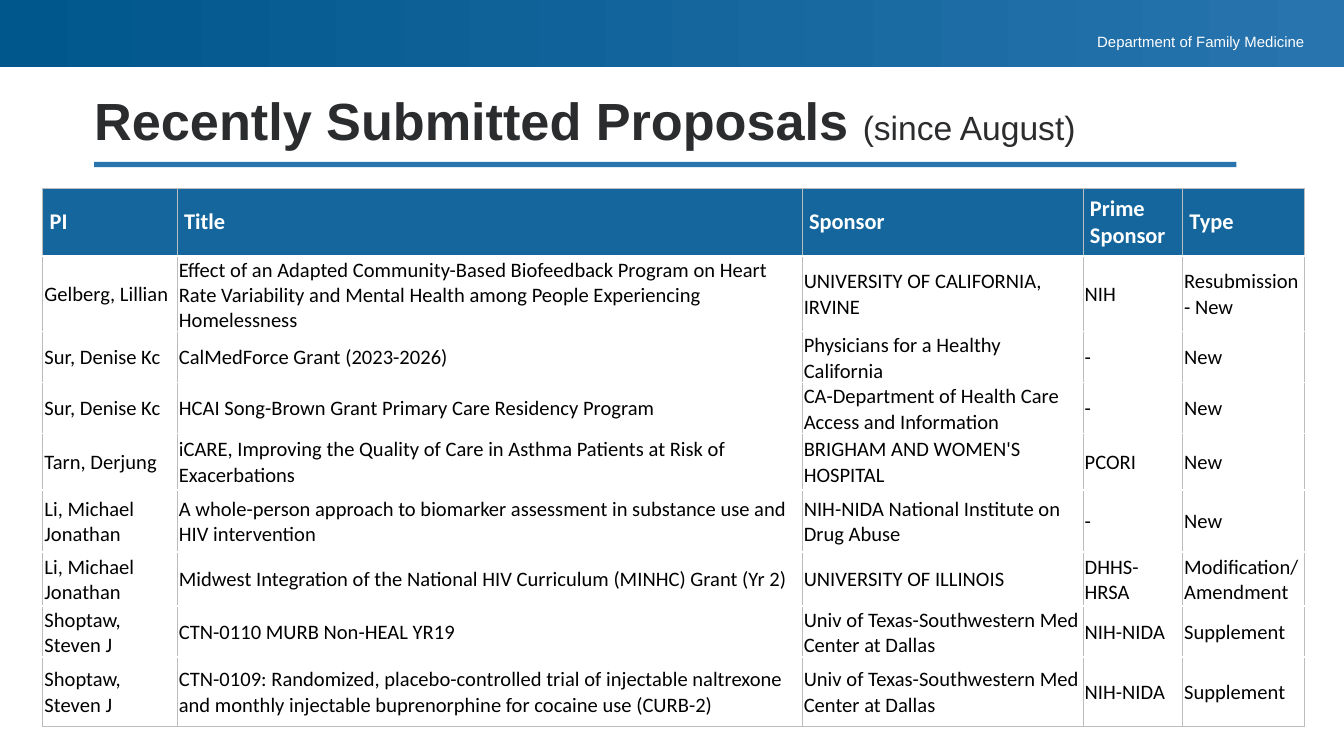
from dataclasses import dataclass

from lxml import etree
from pptx import Presentation
from pptx.dml.color import RGBColor
from pptx.enum.shapes import MSO_SHAPE
from pptx.enum.text import MSO_ANCHOR, MSO_AUTO_SIZE, PP_ALIGN
from pptx.oxml.ns import qn
from pptx.util import Cm, Pt

RECT = MSO_SHAPE.RECTANGLE
MIDDLE, BOTTOM = MSO_ANCHOR.MIDDLE, MSO_ANCHOR.BOTTOM
LEFT, RIGHT = PP_ALIGN.LEFT, PP_ALIGN.RIGHT
NO_FIT = MSO_AUTO_SIZE.NONE


@dataclass(frozen=True)
class Theme:
    navy: str = "00578B"
    blue: str = "2774AE"
    header: str = "14669D"
    border: str = "BBBCBE"
    ink: str = "2B2C2E"
    black: str = "000000"
    white: str = "FFFFFF"
    title: int = 28
    subtitle: int = 18
    table_head: int = 12
    table_body: int = 11
    label: int = 8
    border_width: float = 0.5
    heading_font: str = "Arial"
    table_font: str = "Calibri"


T = Theme()

HEADERS = ["PI", "Title", "Sponsor", "Prime Sponsor", "Type"]
PROPOSALS = [
    ["Gelberg, Lillian",
     "Effect of an Adapted Community-Based Biofeedback Program on Heart Rate Variability "
     "and Mental Health among People Experiencing Homelessness",
     "UNIVERSITY OF CALIFORNIA, IRVINE", "NIH", "Resubmission - New"],
    ["Sur, Denise Kc", "CalMedForce Grant (2023-2026)",
     "Physicians for a Healthy California", "-", "New"],
    ["Sur, Denise Kc", "HCAI Song-Brown Grant Primary Care Residency Program",
     "CA-Department of Health Care Access and Information", "-", "New"],
    ["Tarn, Derjung",
     "iCARE, Improving the Quality of Care in Asthma Patients at Risk of Exacerbations",
     "BRIGHAM AND WOMEN'S HOSPITAL", "PCORI", "New"],
    ["Li, Michael Jonathan",
     "A whole-person approach to biomarker assessment in substance use and HIV intervention",
     "NIH-NIDA National Institute on Drug Abuse", "-", "New"],
    ["Li, Michael Jonathan",
     "Midwest Integration of the National HIV Curriculum (MINHC) Grant (Yr 2)",
     "UNIVERSITY OF ILLINOIS", "DHHS-HRSA", "Modification/ Amendment"],
    ["Shoptaw, Steven J", "CTN-0110 MURB Non-HEAL YR19",
     "Univ of Texas-Southwestern Med Center at Dallas", "NIH-NIDA", "Supplement"],
    ["Shoptaw, Steven J",
     "CTN-0109: Randomized, placebo-controlled trial of injectable naltrexone and monthly "
     "injectable buprenorphine for cocaine use (CURB-2)",
     "Univ of Texas-Southwestern Med Center at Dallas", "NIH-NIDA", "Supplement"],
]
COL_WIDTHS = [2.54, 11.81, 5.31, 1.88, 2.31]
ROW_HEIGHTS = [0.94, 1.07, 0.89, 0.81, 1.07, 1.17, 1.02, 0.71, 1.32]


def style(r, font, size, color, bold=False):
    r.font.name = font
    r.font.size = Pt(size)
    r.font.bold = bold
    r.font.color.rgb = RGBColor.from_string(color)


def add_borders(cell, sides):
    """Draw thin lines on the given sides, named by the letters L, R, T and B."""
    tc_pr = cell._tc.get_or_add_tcPr()
    for side in sides:
        ln = etree.SubElement(tc_pr, qn(f"a:ln{side}"), w=str(Pt(T.border_width)))
        fill = etree.SubElement(ln, qn("a:solidFill"))
        etree.SubElement(fill, qn("a:srgbClr"), val=T.border)


prs = Presentation()
prs.slide_width, prs.slide_height = Cm(25.4), Cm(14.29)
s = prs.slides.add_slide(prs.slide_layouts[5])

# Top band and rule under the title
band = s.shapes.add_shape(RECT, 0, 0, prs.slide_width, Cm(1.27))
band.fill.gradient()
band.fill.gradient_angle = 0
for stop, color in zip(band.fill.gradient_stops, (T.navy, T.blue)):
    stop.color.rgb = RGBColor.from_string(color)
rule = s.shapes.add_shape(RECT, Cm(1.78), Cm(3.06), Cm(21.59), Cm(0.1))
rule.fill.solid()
rule.fill.fore_color.rgb = RGBColor.from_string(T.blue)
for sp in (band, rule):
    sp.line.fill.background()
    sp.shadow.inherit = False

# Department label
label = s.shapes.add_textbox(Cm(18.29), Cm(0.58), Cm(6.37), Cm(0.36))
tf = label.text_frame
tf.word_wrap = True
tf.margin_left, tf.margin_right = Cm(0.25), 0
tf.margin_top = tf.margin_bottom = Cm(0.03)
tf.text = "Department of Family Medicine"
p = tf.paragraphs[0]
p.alignment = RIGHT
style(p.runs[0], T.heading_font, T.label, T.white)

# Title
title = s.shapes.title
title.left, title.top, title.width, title.height = Cm(1.78), Cm(1.78), Cm(21.59), Cm(1.09)
tf = title.text_frame
tf.auto_size = NO_FIT
tf.vertical_anchor = BOTTOM
tf.margin_left = tf.margin_right = tf.margin_top = tf.margin_bottom = 0
tf.text = "Recently Submitted Proposals "
p = tf.paragraphs[0]
p.alignment = LEFT
p.line_spacing = 0.9
style(p.runs[0], T.heading_font, T.title, T.ink, bold=True)
r = p.add_run()
r.text = "(since August)"
style(r, T.heading_font, T.subtitle, T.ink)

# Proposals table
rows = [HEADERS] + PROPOSALS
table = s.shapes.add_table(len(rows), len(HEADERS), Cm(0.81), Cm(3.56),
                           Cm(sum(COL_WIDTHS)), Cm(sum(ROW_HEIGHTS))).table
table.horz_banding = False
for column, width in zip(table.columns, COL_WIDTHS):
    column.width = Cm(width)
for row, height in zip(table.rows, ROW_HEIGHTS):
    row.height = Cm(height)

for i, values in enumerate(rows):
    is_head = i == 0
    margin = Cm(0.13 if is_head else 0.03)
    for j, value in enumerate(values):
        cell = table.cell(i, j)
        add_borders(cell, "LRT" if is_head else "LRB")
        cell.fill.solid()
        cell.fill.fore_color.rgb = RGBColor.from_string(T.header if is_head else T.white)
        cell.vertical_anchor = MIDDLE
        cell.margin_left = cell.margin_right = cell.margin_top = margin
        cell.margin_bottom = margin if is_head else 0
        cell.text_frame.text = value
        r = cell.text_frame.paragraphs[0].runs[0]
        if is_head:
            style(r, T.table_font, T.table_head, T.white, bold=True)
        else:
            style(r, T.table_font, T.table_body, T.black)

prs.save("out.pptx")
